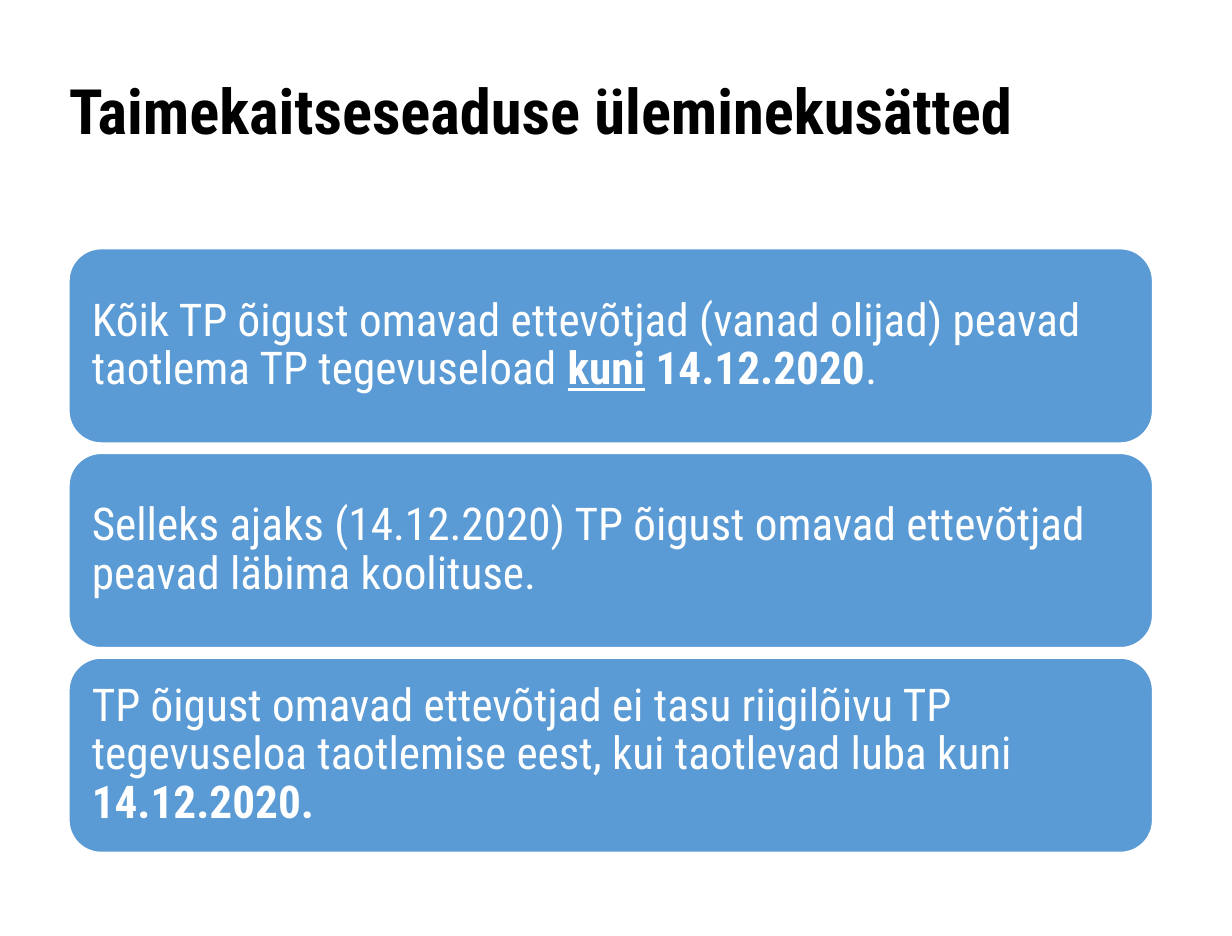
from pptx import Presentation
from pptx.dml.color import RGBColor
from pptx.enum.shapes import MSO_SHAPE as SHAPE
from pptx.enum.text import MSO_ANCHOR as ANCHOR, PP_ALIGN as ALIGN
from pptx.util import Pt

TITLE = "Taimekaitseseaduse üleminekusätted"
RULES = [
    [("Kõik TP õigust omavad ettevõtjad (vanad olijad) peavad taotlema TP tegevuseload ", ""),
     ("kuni", "bu"), (" 14.12.2020", "b"), (".", "")],
    [("Selleks ajaks (14.12.2020) TP õigust omavad ettevõtjad peavad läbima koolituse.", "")],
    [("TP õigust omavad ettevõtjad ei tasu riigilõivu TP tegevuseloa taotlemise eest, "
      "kui taotlevad luba kuni ", ""), ("14.12.2020.", "b")],
]
COLORS = {"title": "000000", "card": "5B9BD5", "white": "FFFFFF"}
FONT = "Roboto Condensed"
SLIDE_WIDTH, SLIDE_HEIGHT = 708.66, 538.58
LEFT, WIDTH = 39.6, 623.5
CARD_TOP, CARD_HEIGHT, CARD_GAP = 143, 112, 5.8


def rgb(name):
    return RGBColor.from_string(COLORS[name])


def write(s, runs, size, color, spacing, insets, anchor):
    tf = s.text_frame
    tf.word_wrap = True
    tf.vertical_anchor = anchor
    tf.margin_left, tf.margin_top, tf.margin_right, tf.margin_bottom = map(Pt, insets)
    p = tf.paragraphs[0]
    p.alignment = ALIGN.LEFT
    p.line_spacing = spacing
    for text, style in runs:
        r = p.add_run()
        r.text = text
        r.font.name = FONT
        r.font.size = Pt(size)
        r.font.bold = "b" in style
        r.font.underline = "u" in style
        r.font.color.rgb = rgb(color)


prs = Presentation()
prs.slide_width, prs.slide_height = Pt(SLIDE_WIDTH), Pt(SLIDE_HEIGHT)
slide = prs.slides.add_slide(prs.slide_layouts[6])

title = slide.shapes.add_textbox(Pt(LEFT), Pt(42.5), Pt(WIDTH), Pt(85))
write(title, [(TITLE, "b")], size=36, color="title", spacing=0.88,
      insets=(0, 4.3, 0, 0), anchor=ANCHOR.TOP)

for i, runs in enumerate(RULES):
    top = CARD_TOP + i * (CARD_HEIGHT + CARD_GAP)
    card = slide.shapes.add_shape(SHAPE.ROUNDED_RECTANGLE, Pt(LEFT), Pt(top),
                                  Pt(WIDTH), Pt(CARD_HEIGHT))
    card.shadow.inherit = False
    card.fill.solid()
    card.fill.fore_color.rgb = rgb("card")
    card.line.color.rgb = rgb("white")
    card.line.width = Pt(1)
    write(card, runs, size=26, color="white", spacing=0.9,
          insets=(7.8, 7.8, 7.8, 7.8), anchor=ANCHOR.MIDDLE)

prs.save("out.pptx")
